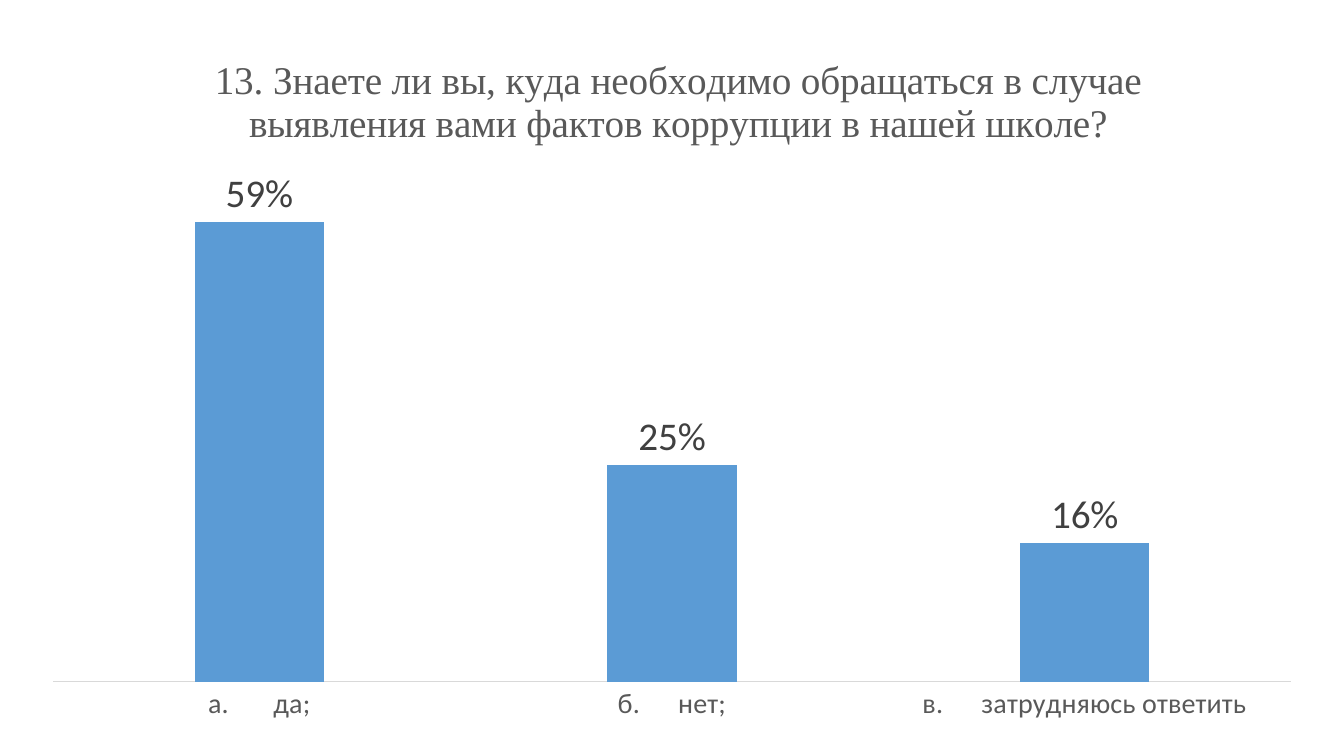
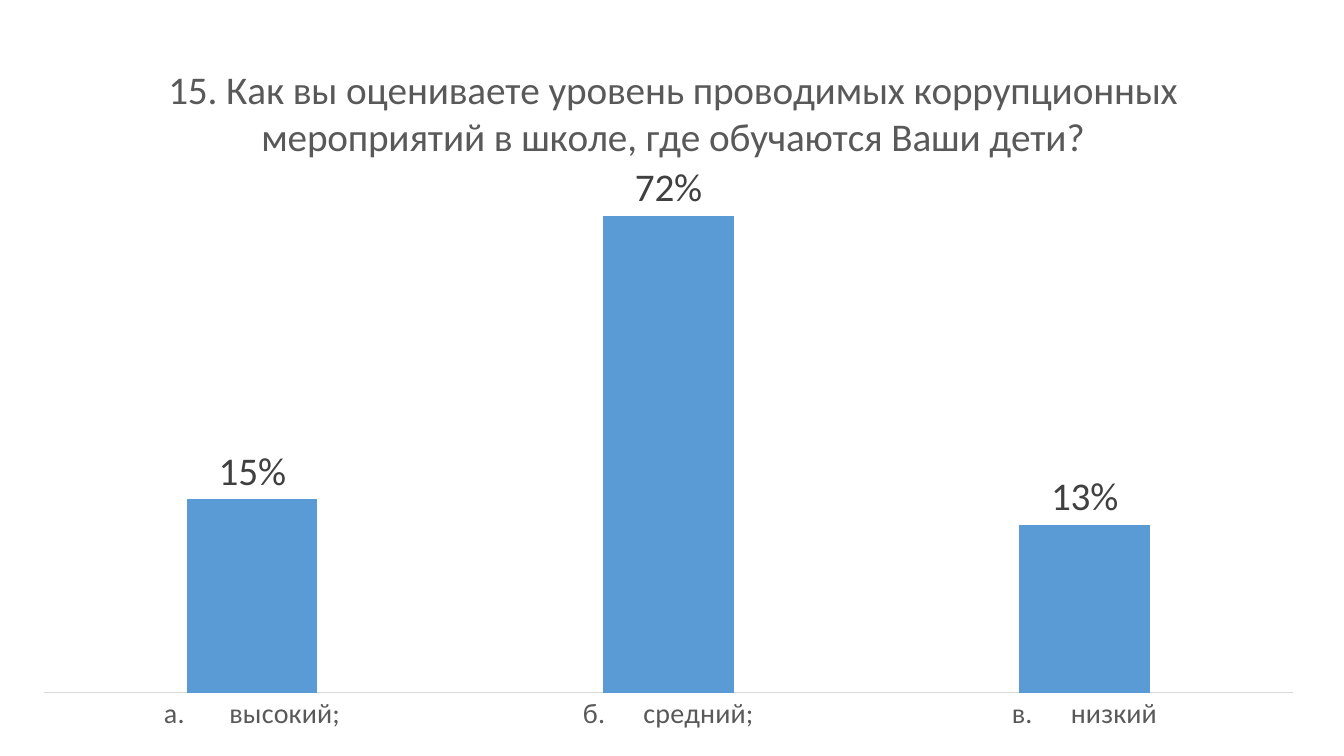
"""Build two survey slides, each with one column chart."""
import pptx
import pptx.chart.data
import pptx.dml.color
import pptx.enum.chart
import pptx.oxml
import pptx.oxml.ns
import pptx.util

Inches, Pt = pptx.util.Inches, pptx.util.Pt
RGBColor = pptx.dml.color.RGBColor
BLUE = RGBColor(0x5B, 0x9B, 0xD5)
GREY = RGBColor(0x59, 0x59, 0x59)
DARK = RGBColor(0x40, 0x40, 0x40)
PALE = RGBColor(0xD9, 0xD9, 0xD9)
SANS, SERIF = "Calibri", "Times New Roman"
GAP = chr(160)


def write(frame, text, size=28, color=DARK, face=SANS):
    frame.text = text
    font = frame.paragraphs[0].runs[0].font
    font.size, font.name, font.bold = Pt(size), face, False
    font.color.rgb = color


def place(part, index, **sides):
    for old in part.findall(pptx.oxml.ns.qn("c:layout")):
        part.remove(old)
    tags = "".join(f'<c:{side} val="{val}"/>' for side, val in sides.items())
    inner = '<c:layoutTarget val="inner"/>' if "w" in sides else ""
    part.insert(index, pptx.oxml.parse_xml(
        f'<c:layout {pptx.oxml.ns.nsdecls("c")}><c:manualLayout>{inner}'
        '<c:xMode val="edge"/><c:yMode val="edge"/>'
        f'{tags}</c:manualLayout></c:layout>'))


slides = [
    dict(title="13. Знаете ли вы, куда необходимо обращаться в случае "
               "выявления вами фактов коррупции в нашей школе?",
         face=SERIF, box=(0.27, 0.19, 12.79, 7.07), left=0.14, top=0.2,
         names=("да;", "нет;", "затрудняюсь ответить"),
         vals=(0.53, 0.25, 0.16), most=0.6, point=0, label="59%"),
    dict(title="15. Как вы оцениваете уровень проводимых коррупционных "
               "мероприятий в школе, где обучаются Ваши дети?",
         face=SANS, box=(0.18, 0.27, 12.9, 7.1), left=0.11, top=0.21,
         names=("высокий;", "средний;", "низкий"),
         vals=(0.15, 0.37, 0.13), most=0.4, point=1, label="72%"),
]

deck = pptx.Presentation()
deck.slide_width, deck.slide_height = Inches(13.33), Inches(7.5)
outside = pptx.enum.chart.XL_LABEL_POSITION.OUTSIDE_END

for item in slides:
    slide = deck.slides.add_slide(deck.slide_layouts[6])
    data = pptx.chart.data.CategoryChartData(number_format="0%")
    data.categories = [f"{mark}.{GAP * count} {name}" for mark, count, name
                       in zip("абв", (6, 5, 5), item["names"])]
    data.add_series("Series 1", item["vals"])
    chart = slide.shapes.add_chart(
        pptx.enum.chart.XL_CHART_TYPE.COLUMN_CLUSTERED,
        *map(Inches, item["box"]), data).chart
    chart.font.name, chart.font.size = SANS, Pt(10)
    chart.has_legend = False

    chart.has_title = True
    title = chart.chart_title
    write(title.text_frame, item["title"], color=GREY, face=item["face"])
    title.include_in_layout = False
    place(title._element, 1, x=item["left"], y=0.04)
    place(chart._chartSpace.chart.plotArea, 0, x=0.02, y=item["top"],
          w=0.96, h=round(0.93 - item["top"], 2))

    values = chart.value_axis
    values.visible = values.has_major_gridlines = False
    values.minimum_scale, values.maximum_scale = 0, item["most"]

    axis = chart.category_axis
    axis.major_tick_mark = pptx.enum.chart.XL_TICK_MARK.NONE
    axis.format.line.color.rgb = PALE
    axis.format.line.width = Pt(0.75)
    font = axis.tick_labels.font
    font.size, font.name, font.color.rgb = Pt(20), SANS, GREY

    plot = chart.plots[0]
    plot.gap_width, plot.overlap = 219, -27
    plot.vary_by_categories = False
    bars = plot.series[0]
    bars.format.fill.solid()
    bars.format.fill.fore_color.rgb = BLUE
    labels = bars.data_labels
    labels.show_value = True
    labels.number_format, labels.number_format_is_linked = "0%", False
    labels.position = outside
    font = labels.font
    font.size, font.name, font.color.rgb = Pt(28), SANS, DARK
    label = bars.points[item["point"]].data_label
    write(label.text_frame, item["label"])
    label.position = outside

deck.save("out.pptx")
